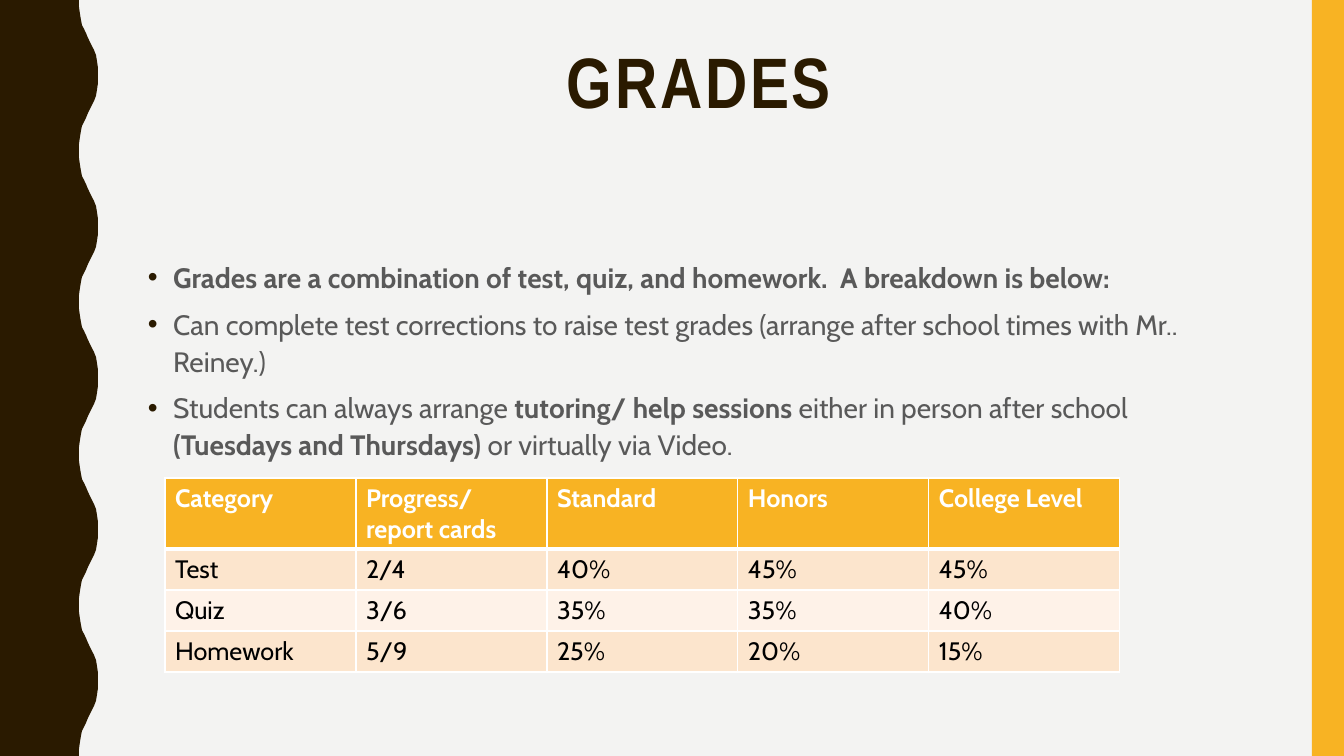
"""Build the Grades slide: wavy side band, bullet list and weighting table."""
from lxml import etree
from pptx import Presentation
from pptx import util as u
from pptx.dml.color import RGBColor
from pptx.enum import shapes, text
from pptx.oxml.ns import qn

PX = 914400 / 100.8
WIDTH, HEIGHT = 1344, 756
BROWN = RGBColor(0x2A, 0x1A, 0x00)
GOLD = RGBColor(0xF8, 0xB3, 0x23)
PAPER = RGBColor(0xF3, 0xF3, 0xF2)
GREY = RGBColor(0x59, 0x59, 0x59)
WHITE = RGBColor(0xFF, 0xFF, 0xFF)
BLACK = RGBColor(0x00, 0x00, 0x00)
PEACH = RGBColor(0xFC, 0xE5, 0xCD)
CREAM = RGBColor(0xFE, 0xF2, 0xE8)
HEADING_FONT, BODY_FONT = "Arial Narrow", "Cabin"

WAVES = 5
HALF_WAVE = [(79, 0), (79, 7), (80, 14), (81, 20), (82, 25), (84, 29), (86, 33), (88, 38),
             (90, 42), (92, 46), (94, 50), (96, 55), (97, 61), (98, 68), (98, 76)]

BULLETS = [
    [("Grades are a combination of test, quiz, and homework.  A breakdown is below:", True)],
    [("Can complete test corrections to raise test grades "
      "(arrange after school times with Mr.. Reiney.)", False)],
    [("Students can always arrange", False), (" tutoring/ help sessions ", True),
     ("either in person after school ", False), ("(Tuesdays and Thursdays) ", True),
     ("or virtually via Video.", False)],
]
GRADES = [
    ["Category", "Progress/ report cards", "Standard", "Honors", "College Level"],
    ["Test", "2/4", "40%", "45%", "45%"],
    ["Quiz", "3/6", "35%", "35%", "40%"],
    ["Homework", "5/9", "25%", "20%", "15%"],
]
COLUMN_WIDTH, HEADER_HEIGHT, ROW_HEIGHT = 191, 71, 41


def px(*lengths):
    """Turn pixel lengths into EMU."""
    return [u.Emu(round(length * PX)) for length in lengths]


def paint(shape, color):
    """Give a shape a plain fill without line or shadow."""
    shape.shadow.inherit = False
    shape.fill.solid()
    shape.fill.fore_color.rgb = color
    shape.line.fill.background()


def add_run(paragraph, words, font_name, size, color, bold):
    """Append one formatted run and return it."""
    run = paragraph.add_run()
    run.text = words
    run.font.name = font_name
    run.font.size = u.Pt(size)
    run.font.color.rgb = color
    run.font.bold = bold
    return run


def add_wavy_band(slide):
    """Draw the left band with its mirrored, repeated half wave."""
    period = HEIGHT / WAVES
    wave = HALF_WAVE + [(x, period - y) for x, y in reversed(HALF_WAVE[:-1])]
    edge = [(x, round(number * period + y)) for number in range(WAVES) for x, y in wave]
    builder = slide.shapes.build_freeform(0, 0, scale=PX)
    builder.add_line_segments(edge + [(0, HEIGHT)], close=True)
    paint(builder.convert_to_shape(), BROWN)


def add_side_bar(slide):
    """Draw the bar on the right edge."""
    bar = slide.shapes.add_shape(shapes.MSO_SHAPE.RECTANGLE, *px(1312, 0, 32, HEIGHT))
    paint(bar, GOLD)


def set_title(slide, words):
    """Place and format the title placeholder."""
    title = slide.shapes.title
    title.left, title.top, title.width, title.height = px(138, 42, 1122, 164)
    frame = title.text_frame
    frame.vertical_anchor = text.MSO_ANCHOR.TOP
    frame.auto_size = text.MSO_AUTO_SIZE.NONE
    paragraph = frame.paragraphs[0]
    paragraph.alignment = text.PP_ALIGN.CENTER
    paragraph.line_spacing = 0.9
    run = add_run(paragraph, words, HEADING_FONT, 51, BROWN, True)
    run.font._element.set("spc", "200")


def set_bullet(paragraph):
    """Add a hanging brown bullet to a paragraph."""
    properties = paragraph._p.get_or_add_pPr()
    properties.set("marL", "228600")
    properties.set("indent", "-228600")
    color = etree.SubElement(properties, qn("a:buClr"))
    etree.SubElement(color, qn("a:srgbClr"), val=str(BROWN))
    etree.SubElement(properties, qn("a:buFont"), typeface="Arial")
    etree.SubElement(properties, qn("a:buChar"), char="•")


def add_bullets(slide, items):
    """Add the list of bullet paragraphs."""
    frame = slide.shapes.add_textbox(*px(138, 252, 1122, 396)).text_frame
    frame.word_wrap = True
    for index, runs in enumerate(items):
        paragraph = frame.add_paragraph() if index else frame.paragraphs[0]
        paragraph.line_spacing = 1.1
        paragraph.space_before = u.Pt(7)
        set_bullet(paragraph)
        for words, bold in runs:
            add_run(paragraph, words, BODY_FONT, 20, GREY, bold)


def set_border(cell, side, points):
    """Draw one white border of a cell."""
    properties = cell._tc.get_or_add_tcPr()
    line = etree.SubElement(properties, qn(f"a:ln{side}"), w=str(u.Pt(points)))
    fill = etree.SubElement(line, qn("a:solidFill"))
    etree.SubElement(fill, qn("a:srgbClr"), val=str(WHITE))


def format_cell(cell, words, row):
    """Fill, border and write one table cell."""
    header = row == 0
    for side, points in (("L", 1), ("R", 1), ("T", 3 if row == 1 else 1), ("B", 3 if header else 1)):
        set_border(cell, side, points)
    cell.fill.solid()
    cell.fill.fore_color.rgb = GOLD if header else PEACH if row % 2 else CREAM
    paragraph = cell.text_frame.paragraphs[0]
    add_run(paragraph, words, BODY_FONT, 18, WHITE if header else BLACK, header)


def add_grade_table(slide, rows):
    """Add the table of grade weights."""
    columns = len(rows[0])
    height = HEADER_HEIGHT + ROW_HEIGHT * (len(rows) - 1)
    frame = slide.shapes.add_table(
        len(rows), columns, *px(165, 478, COLUMN_WIDTH * columns, height))
    table = frame.table
    for column in table.columns:
        column.width = px(COLUMN_WIDTH)[0]
    for index, values in enumerate(rows):
        table.rows[index].height = px(ROW_HEIGHT if index else HEADER_HEIGHT)[0]
        for column, words in enumerate(values):
            format_cell(table.cell(index, column), words, index)


def main():
    """Build and save the presentation."""
    presentation = Presentation()
    presentation.slide_width, presentation.slide_height = px(WIDTH, HEIGHT)
    slide = presentation.slides.add_slide(presentation.slide_layouts[5])
    slide.background.fill.solid()
    slide.background.fill.fore_color.rgb = PAPER
    add_wavy_band(slide)
    add_side_bar(slide)
    set_title(slide, "GRADES")
    add_bullets(slide, BULLETS)
    add_grade_table(slide, GRADES)
    presentation.save("out.pptx")


if __name__ == "__main__":
    main()
